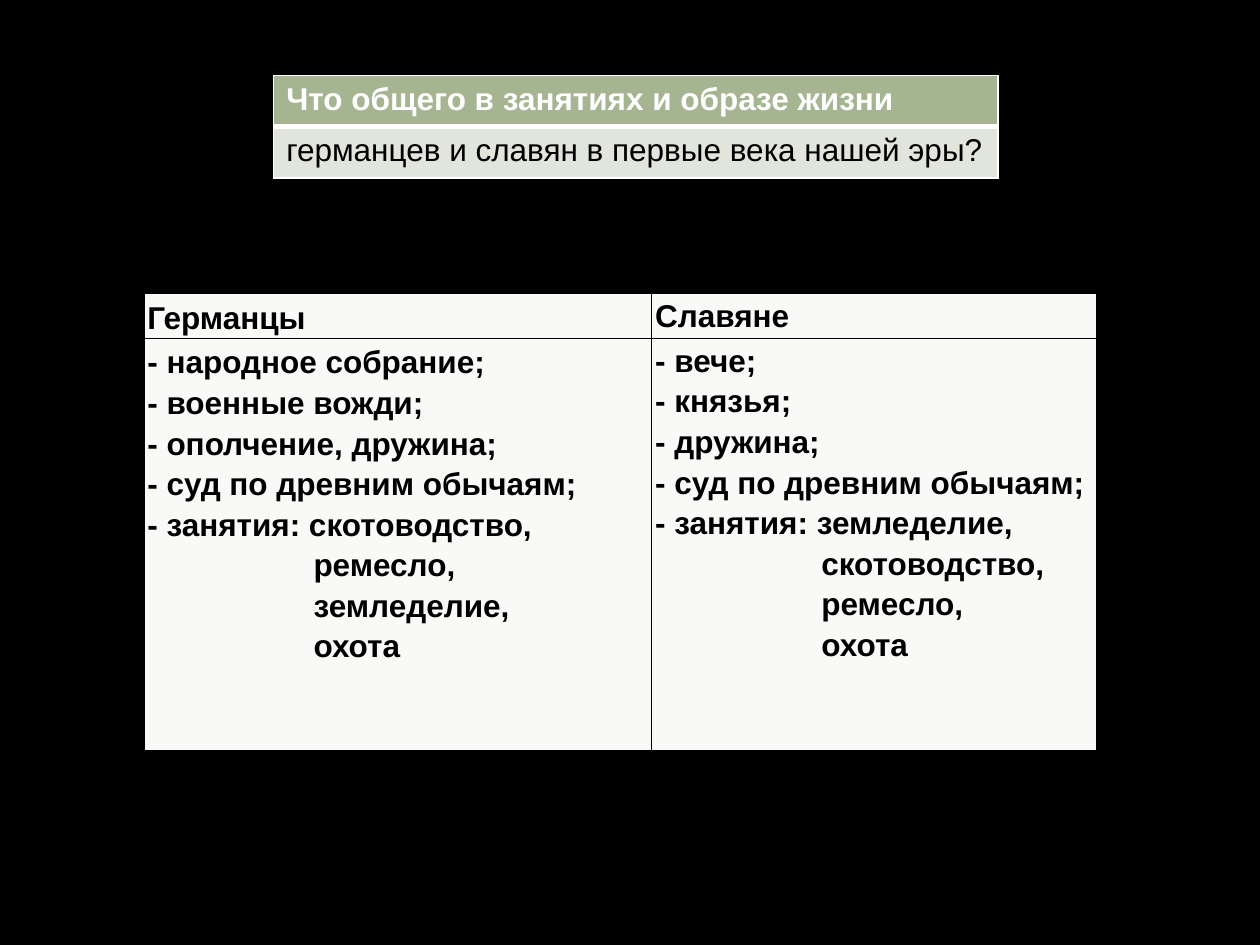
from lxml import etree
from pptx import Presentation
from pptx.dml.color import RGBColor
from pptx.oxml.ns import qn
from pptx.util import Pt

COLORS = {
    "back": "000000",
    "head": "A5B592",
    "band": "E1E5DC",
    "pale": "F9F9F7",
    "dark": "000000",
    "light": "FFFFFF",
}
FONT = "Arial"
SIZE = 18
INDENT = 95  # left margin of the continued list of occupations

TITLE = [
    "Что общего в занятиях и образе жизни",
    "германцев и славян в первые века нашей эры?",
]
# Heading, list, continued list, cell margins (left, top, right, bottom)
PEOPLES = [
    ("Германцы",
     ["- народное собрание;", "- военные вожди;", "- ополчение, дружина;",
      "- суд по древним обычаям;", "- занятия: скотоводство,"],
     ["ремесло,", "земледелие,", "охота"],
     (2, 0.9, 0.9, 0.9)),
    ("Славяне",
     ["- вече;", "- князья;", "- дружина;",
      "- суд по древним обычаям;", "- занятия: земледелие,"],
     ["скотоводство,", "ремесло,", "охота"],
     (2, 0, 2, 0)),
]


def rgb(name):
    return RGBColor.from_string(COLORS[name])


def add_grid(slide, left, top, widths, heights):
    frame = slide.shapes.add_table(
        len(heights), len(widths), Pt(left), Pt(top),
        Pt(sum(widths)), Pt(sum(heights)))
    table = frame.table
    for col, width in zip(table.columns, widths):
        col.width = Pt(width)
    for row, height in zip(table.rows, heights):
        row.height = Pt(height)
    return table


def set_edges(cell, color, top=1, bottom=1):
    props = cell._tc.get_or_add_tcPr()
    for tag, width in (("lnL", 1), ("lnR", 1), ("lnT", top), ("lnB", bottom)):
        line = etree.SubElement(props, qn("a:" + tag), w=str(Pt(width)))
        fill = etree.SubElement(line, qn("a:solidFill"))
        etree.SubElement(fill, qn("a:srgbClr"), val=COLORS[color])


def set_fill(cell, color):
    cell.fill.solid()
    cell.fill.fore_color.rgb = rgb(color)


def set_text(cell, lines, color, bold, space=1.0):
    cell.text_frame.text = "\n".join(lines)
    for para in cell.text_frame.paragraphs:
        para.line_spacing = space
        for run in para.runs:
            font = run.font
            font.name, font.size, font.bold = FONT, Pt(SIZE), bold
            font.color.rgb = rgb(color)


def set_margins(cell, sides):
    (cell.margin_left, cell.margin_top,
     cell.margin_right, cell.margin_bottom) = map(Pt, sides)


def indent(paras):
    for para in paras:
        props = para._p.get_or_add_pPr()
        props.set("marL", str(Pt(INDENT)))
        props.set("indent", "0")


def add_title(slide):
    table = add_grid(slide, 156.4, 43.2, [414], [29.2, 29.2])
    head, body = table.cell(0, 0), table.cell(1, 0)
    set_edges(head, "light", bottom=3)
    set_edges(body, "light", top=3)
    set_fill(head, "head")
    set_fill(body, "band")
    set_text(head, TITLE[:1], "light", True)
    set_text(body, TITLE[1:], "dark", False)


def add_peoples(slide):
    table = add_grid(slide, 82.2, 167.8, [290.2, 254.2], [25.7, 235.3])
    for col, (name, items, more, sides) in enumerate(PEOPLES):
        for row, lines in enumerate(([name], items + more)):
            cell = table.cell(row, col)
            set_edges(cell, "dark")
            set_fill(cell, "pale")
            set_margins(cell, sides)
            set_text(cell, lines, "dark", True, 1.15)
        indent(table.cell(1, col).text_frame.paragraphs[len(items):])


def main():
    deck = Presentation()
    deck.slide_width, deck.slide_height = Pt(720), Pt(540)
    slide = deck.slides.add_slide(deck.slide_layouts[6])  # blank layout
    back = slide.background.fill
    back.solid()
    back.fore_color.rgb = rgb("back")
    add_title(slide)
    add_peoples(slide)
    deck.save("out.pptx")


if __name__ == "__main__":
    main()
